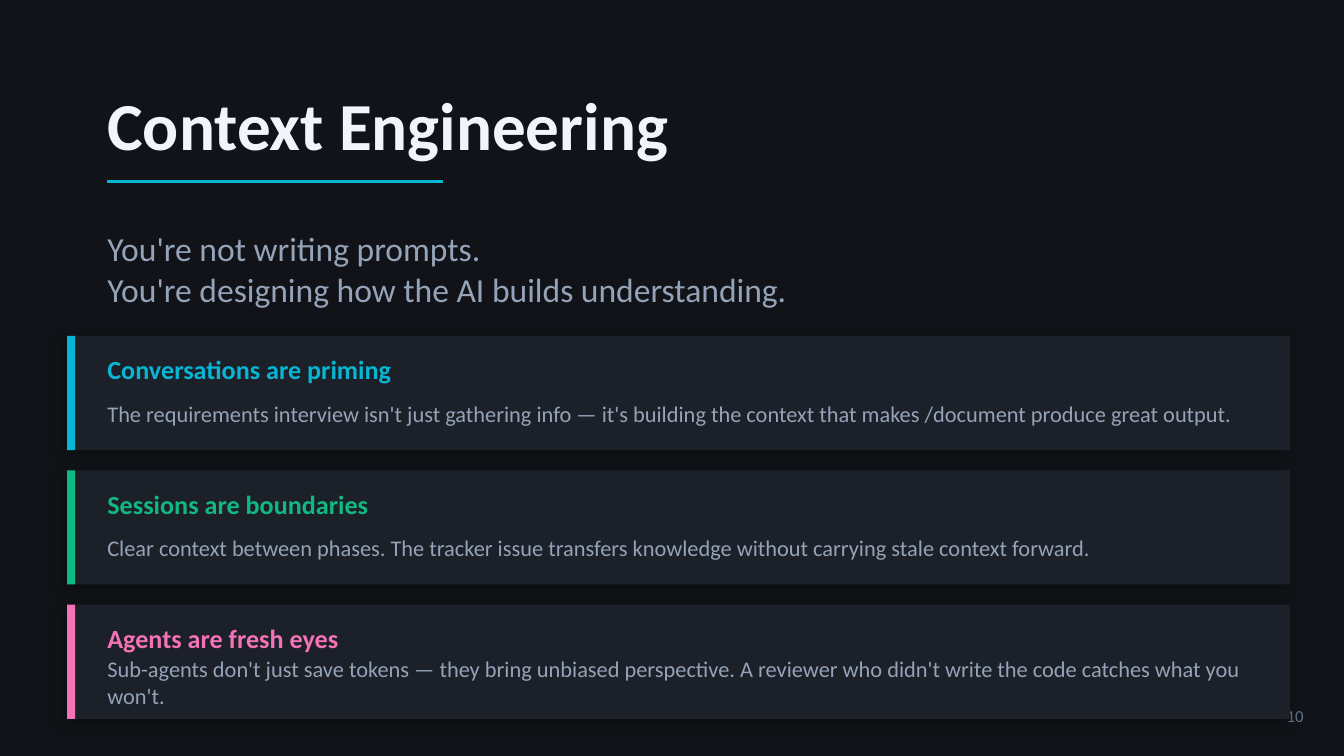
from dataclasses import dataclass

from lxml import etree
from pptx import Presentation
from pptx.dml.color import RGBColor
from pptx.enum.shapes import MSO_CONNECTOR, MSO_SHAPE
from pptx.enum.text import MSO_ANCHOR, MSO_AUTO_SIZE, PP_ALIGN
from pptx.oxml import parse_xml
from pptx.oxml.ns import nsdecls, qn
from pptx.util import Cm, Pt

RECTANGLE = MSO_SHAPE.RECTANGLE
STRAIGHT = MSO_CONNECTOR.STRAIGHT
MIDDLE = MSO_ANCHOR.MIDDLE
NO_FIT = MSO_AUTO_SIZE.NONE
LEFT, RIGHT = PP_ALIGN.LEFT, PP_ALIGN.RIGHT
TITLE_ONLY = 5


@dataclass(frozen=True)
class Theme:
    font: str = "Calibri"
    background: str = "111318"
    panel: str = "1C2028"
    title: str = "F1F5F9"
    body: str = "94A3B8"
    faint: str = "64748B"
    cyan: str = "06B6D4"
    green: str = "10B981"
    pink: str = "F472B6"
    title_size: int = 36
    lead_size: int = 18
    heading_size: int = 14
    body_size: int = 12
    number_size: int = 9


@dataclass(frozen=True)
class Box:
    left: float
    top: float
    width: float
    height: float

    def inner(self, left, top, width, height):
        return Box(self.left + left, self.top + top, width, height)

    def lengths(self):
        return Cm(self.left), Cm(self.top), Cm(self.width), Cm(self.height)


THEME = Theme()
CARDS = [
    ("Conversations are priming",
     "The requirements interview isn't just gathering info — it's building "
     "the context that makes /document produce great output.", THEME.cyan),
    ("Sessions are boundaries",
     "Clear context between phases. The tracker issue transfers knowledge "
     "without carrying stale context forward.", THEME.green),
    ("Agents are fresh eyes",
     "Sub-agents don't just save tokens — they bring unbiased perspective. "
     "A reviewer who didn't write the code catches what you won't.", THEME.pink),
]


def fill_text(frame, lines, size, color, bold=False, align=LEFT, inset=0):
    frame.word_wrap = True
    frame.auto_size = NO_FIT
    frame.vertical_anchor = MIDDLE
    frame.margin_left = frame.margin_right = Cm(inset)
    frame.margin_top = frame.margin_bottom = Cm(inset / 2)
    frame.text = "\n".join(lines)
    for para in frame.paragraphs:
        para.alignment = align
        para.font.name = THEME.font
        para.font.size = Pt(size)
        para.font.bold = bold
        para.font.color.rgb = RGBColor.from_string(color)


def add_text(page, box, lines, size, color, **options):
    text_box = page.shapes.add_textbox(*box.lengths())
    fill_text(text_box.text_frame, lines, size, color, **options)


def add_block(page, box, color):
    block = page.shapes.add_shape(RECTANGLE, *box.lengths())
    block.shadow.inherit = False
    block.fill.solid()
    block.fill.fore_color.rgb = RGBColor.from_string(color)
    block.line.fill.background()
    return block


def add_soft_shadow(block):
    effects = block._element.spPr.find(qn("a:effectLst"))
    effects.append(parse_xml(
        f'<a:outerShdw {nsdecls("a")} blurRad="{Pt(8)}" dist="{Pt(3)}" '
        'dir="8100000" algn="bl" rotWithShape="0"><a:srgbClr val="000000">'
        '<a:alpha val="30000"/></a:srgbClr></a:outerShdw>'))


def add_header(page, box):
    title = page.shapes.title
    title.left, title.top, title.width, title.height = box.inner(
        0, 0, box.width, 1.65).lengths()
    fill_text(title.text_frame, ["Context Engineering"],
              THEME.title_size, THEME.title, bold=True)

    rule_top = Cm(box.top + 1.91)
    rule = page.shapes.add_connector(
        STRAIGHT, Cm(box.left), rule_top, Cm(box.left + 6.35), rule_top)
    rule.line.color.rgb = RGBColor.from_string(THEME.cyan)
    rule.line.width = Pt(2)
    etree.SubElement(rule._element.spPr, qn("a:effectLst"))

    lead = ["You're not writing prompts.",
            "You're designing how the AI builds understanding."]
    add_text(page, box.inner(0, 2.54, box.width, 2.03), lead,
             THEME.lead_size, THEME.body)


def add_card(page, box, heading, body, accent):
    add_soft_shadow(add_block(page, box, THEME.panel))
    add_block(page, box.inner(0, 0, 0.15, box.height), accent)
    add_text(page, box.inner(0.76, 0.25, 7.62, 0.76), [heading],
             THEME.heading_size, accent, bold=True)
    add_text(page, box.inner(0.76, 1.02, 21.59, 0.89), [body],
             THEME.body_size, THEME.body)


def add_cards(page, box, gap):
    height = (box.height - gap * (len(CARDS) - 1)) / len(CARDS)
    for index, card in enumerate(CARDS):
        card_box = box.inner(0, index * (height + gap), box.width, height)
        add_card(page, card_box, *card)


def add_page_number(page, box):
    add_text(page, box, ["10"], THEME.number_size, THEME.faint,
             align=RIGHT, inset=0.25)


def main():
    deck = Presentation()
    deck.slide_width, deck.slide_height = Cm(25.4), Cm(14.29)
    page = deck.slides.add_slide(deck.slide_layouts[TITLE_ONLY])
    page.background.fill.solid()
    page.background.fill.fore_color.rgb = RGBColor.from_string(THEME.background)
    add_page_number(page, Box(23.62, 13.08, 1.27, 0.89))
    add_header(page, Box(2.03, 1.52, 20.32, 4.57))
    add_cards(page, Box(1.27, 6.35, 23.11, 7.24), gap=0.38)
    deck.save("out.pptx")


if __name__ == "__main__":
    main()
